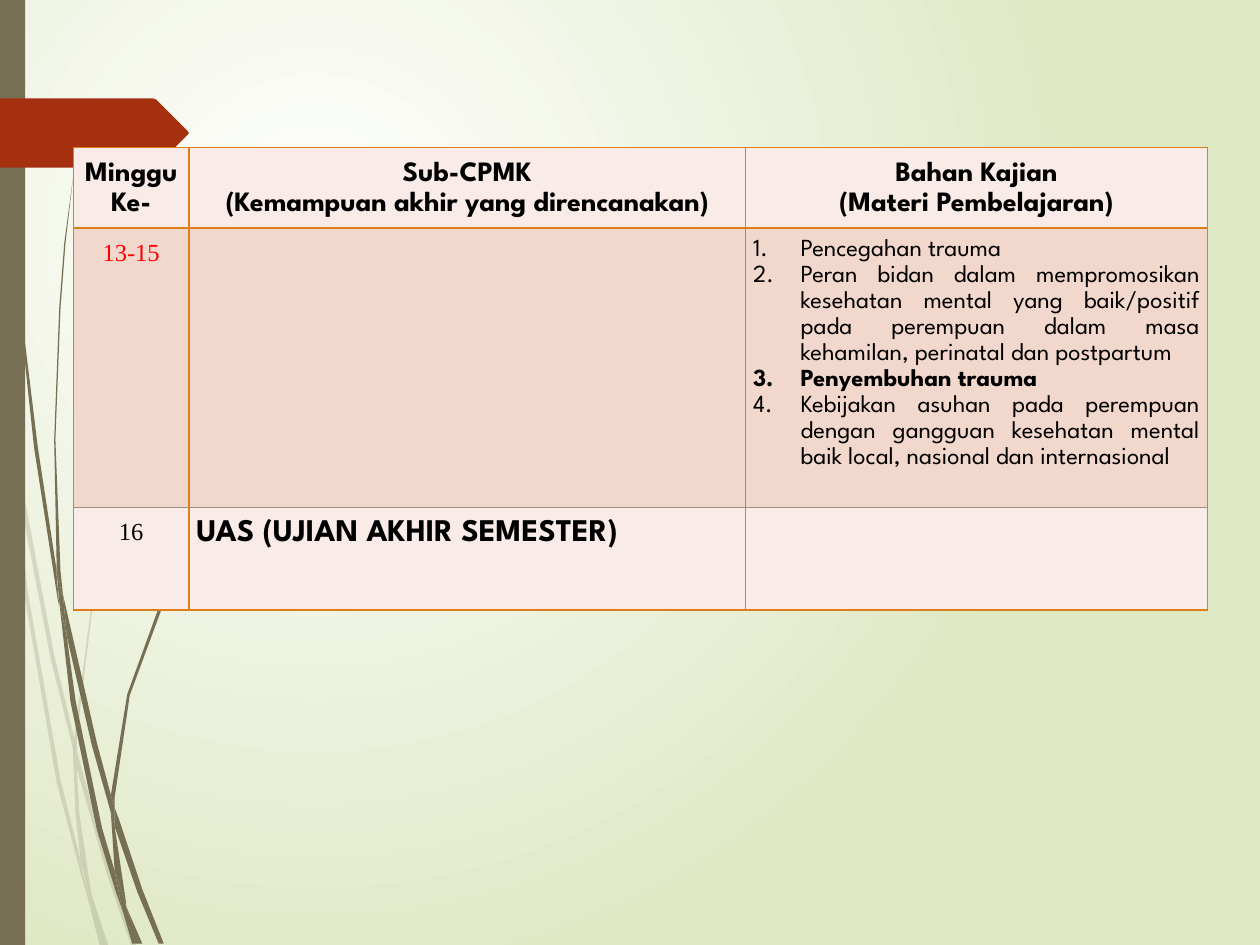
from lxml.etree import SubElement
from pptx import Presentation
from pptx.dml.color import RGBColor
from pptx.enum.shapes import MSO_SHAPE
from pptx.enum.text import MSO_ANCHOR, PP_ALIGN
from pptx.oxml import parse_xml
from pptx.oxml.ns import nsdecls, qn
from pptx.util import Cm, Pt

COLORS = {
    "glow": "FFFFFF", "meadow": "DFE8C4", "stem": "766F54", "arrow": "A53010",
    "light": "F9ECE8", "dark": "F2D8CC", "rule": "DE7E18", "hairline": "9C8F80",
    "text": "000000", "alert": "FF0000",
}
UNIT = Cm(0.0254)
HEAD = "League Spartan"
NUMBERS = "Times New Roman"

PALE_STEMS = [
    [(8, 350), (6, 322), (0, 282), (0, 299), (7, 344)],
    [(40, 522), (59, 599), (59, 586), (43, 520), (10, 345), (12, 376)],
    [(64, 607), (61, 596), (61, 610), (85, 694), (104, 750), (108, 750), (88, 692)],
    [(83, 750), (86, 750), (73, 711)],
    [(64, 683), (48, 619), (22, 469), (12, 376), (8, 350), (19, 470), (45, 621),
     (64, 693), (70, 714), (69, 707)],
    [(58, 599), (60, 646), (64, 683), (67, 692), (73, 711), (72, 706), (63, 646),
     (61, 610), (61, 608)],
    [(61, 584), (76, 462), (111, 349), (159, 245), (187, 198), (201, 175), (217, 154),
     (217, 153), (201, 175), (186, 197), (158, 244), (110, 348), (75, 461), (59, 584),
     (59, 586), (61, 596)],
    [(70, 714), (79, 750), (82, 750)],
    [(61, 608), (61, 610), (61, 596), (59, 586), (58, 599)],
    [(67, 692), (65, 683), (69, 707), (70, 714), (82, 750), (83, 750), (73, 711)],
]
DARK_STEMS = [
    [(5, 110), (14, 233), (27, 355), (46, 477), (47, 481), (45, 457), (45, 453),
     (30, 355), (15, 232), (6, 109), (4, 48), (3, 0), (2, 0), (3, 48)],
    [(73, 592), (88, 645), (88, 633), (88, 631), (77, 590), (50, 472), (53, 505)],
    [(94, 649), (91, 641), (91, 656), (109, 708), (126, 749), (130, 749), (113, 706)],
    [(91, 691), (81, 657), (60, 556), (53, 505), (47, 477), (56, 557), (77, 659),
     (92, 708), (97, 722), (96, 717)],
    [(50, 472), (48, 453), (44, 349), (48, 245), (52, 193), (58, 141), (57.5, 141),
     (51, 193), (47, 245), (43, 349), (45, 449), (49, 472)],
    [(110, 749), (113, 749), (100, 719)],
    [(47, 477), (53, 505), (50, 472), (49, 472), (45, 449), (45, 453)],
    [(91, 633), (103, 552), (131, 476), (169, 406), (191, 374), (203, 359), (216, 344),
     (215, 344), (203, 358), (191, 373), (168, 405), (129, 474), (101, 551), (88, 631),
     (91, 641)],
    [(97, 722), (105, 749), (108, 749)],
    [(88, 645), (91, 691), (96, 706), (100, 719), (100, 716), (91, 656), (90, 651)],
    [(88, 645), (90, 651), (91, 656), (91, 641), (88, 631), (88, 633)],
    [(96, 706), (91, 691), (96, 717), (97, 722), (108, 749), (110, 749), (100, 719)],
]
ARROW = [(0, 78), (121, 78), (124, 79), (149, 104), (149.5, 105.5), (149, 107),
         (124, 132), (121, 133), (0, 133)]


def paint(part, color):
    part.shadow.inherit = False
    part.fill.solid()
    part.fill.fore_color.rgb = RGBColor.from_string(COLORS[color])
    part.line.fill.background()


def draw_outline(shapes, points, color):
    builder = shapes.build_freeform(*points[0], scale=UNIT)
    builder.add_line_segments(points[1:], close=True)
    outline = builder.convert_to_shape()
    paint(outline, color)
    return outline


prs = Presentation()
prs.slide_width, prs.slide_height = Cm(25.4), Cm(19.05)
slide = prs.slides.add_slide(prs.slide_layouts[6])

backdrop = slide.background.fill
backdrop.gradient()
for stop, color in zip(backdrop.gradient_stops, ("glow", "meadow")):
    stop.color.rgb = RGBColor.from_string(COLORS[color])
direction = next(slide.element.iter(qn("a:lin")))
direction.getparent().replace(direction, parse_xml(
    f'<a:path {nsdecls("a")} path="circle">'
    '<a:fillToRect l="50000" t="50000" r="100000" b="100000"/></a:path>'))

for stems, alpha in ((PALE_STEMS, "20000"), (DARK_STEMS, None)):
    tuft = slide.shapes.add_group_shape()
    for points in stems:
        stem = draw_outline(tuft.shapes, points, "stem")
        if alpha:
            tint = stem.element.spPr.find(qn("a:solidFill"))[0]
            SubElement(tint, qn("a:alpha"), val=alpha)

side_bar = slide.shapes.add_shape(MSO_SHAPE.RECTANGLE, 0, 0, Cm(0.51), Cm(19.05))
paint(side_bar, "stem")
draw_outline(slide.shapes, ARROW, "arrow")

widths = [2.33, 11.22, 9.31]
heights = [1.63, 5.63, 2.07]
schedule = slide.shapes.add_table(3, 3, Cm(1.48), Cm(2.97), Cm(sum(widths)),
                                  Cm(sum(heights))).table
for column, width in zip(schedule.columns, widths):
    column.width = Cm(width)
for row, height in zip(schedule.rows, heights):
    row.height = Cm(height)

topics = [
    "Pencegahan trauma",
    "Peran bidan dalam mempromosikan kesehatan mental yang baik/positif pada "
    "perempuan dalam masa kehamilan, perinatal dan postpartum",
    "Penyembuhan trauma",
    "Kebijakan asuhan pada perempuan dengan gangguan kesehatan mental baik local, "
    "nasional dan internasional",
]
contents = [
    [["Minggu Ke-"],
     ["Sub-CPMK", "(Kemampuan akhir yang direncanakan)"],
     ["Bahan Kajian", "(Materi Pembelajaran)"]],
    [["13-15"], [], topics],
    [["16"], ["UAS (UJIAN AKHIR SEMESTER)"], []],
]
styles = {
    (1, 0): (14, NUMBERS, "alert", False, PP_ALIGN.CENTER),
    (1, 2): (14, HEAD, "text", False, PP_ALIGN.JUSTIFY),
    (2, 0): (14, NUMBERS, "text", False, PP_ALIGN.CENTER),
    (2, 1): (18, HEAD, "text", True, PP_ALIGN.LEFT),
}
header_style = (16, HEAD, "text", True, PP_ALIGN.CENTER)

for r, row in enumerate(contents):
    for c, lines in enumerate(row):
        cell = schedule.cell(r, c)
        cell.margin_left = cell.margin_right = Cm(0.15)
        cell.margin_top = cell.margin_bottom = Cm(0.15)
        cell.vertical_anchor = MSO_ANCHOR.TOP if r else MSO_ANCHOR.MIDDLE
        cell.fill.solid()
        cell.fill.fore_color.rgb = RGBColor.from_string(COLORS["dark" if r == 1 else "light"])

        strong = {"L": c == 1, "R": c == 0, "T": r < 2, "B": r != 1}
        for position, (side, is_strong) in enumerate(strong.items()):
            color, weight = ("rule", 1) if is_strong else ("hairline", 0.5)
            cell._tc.tcPr.insert(position, parse_xml(
                f'<a:ln{side} {nsdecls("a")} w="{Pt(weight)}"><a:solidFill>'
                f'<a:srgbClr val="{COLORS[color]}"/></a:solidFill></a:ln{side}>'))

        size, font, color, bold, align = styles.get((r, c), header_style)
        cell.text = "\n".join(lines)
        for paragraph in cell.text_frame.paragraphs:
            paragraph.alignment = align
            paragraph.line_spacing = 1.15
            paragraph.font.size = Pt(size)
            paragraph.font.name = font
            paragraph.font.bold = bold or paragraph.text == "Penyembuhan trauma"
            paragraph.font.color.rgb = RGBColor.from_string(COLORS[color])
            if lines is topics:
                numbering = paragraph._p.get_or_add_pPr()
                numbering.set("marL", str(Cm(0.96)))
                numbering.set("indent", str(-Cm(0.96)))
                numbering.find(qn("a:lnSpc")).addnext(parse_xml(
                    f'<a:buAutoNum {nsdecls("a")} type="arabicPeriod"/>'))

prs.save("out.pptx")
